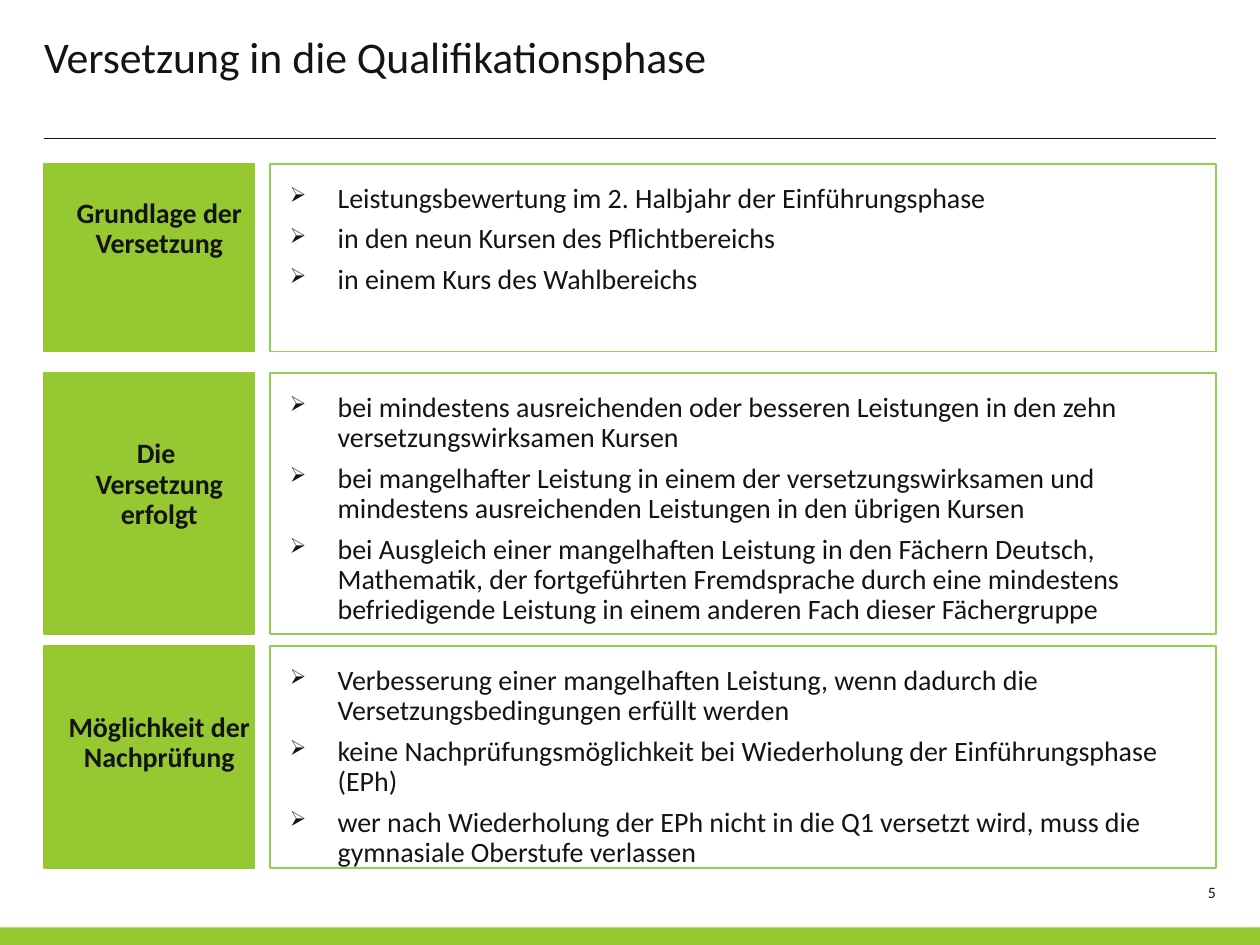
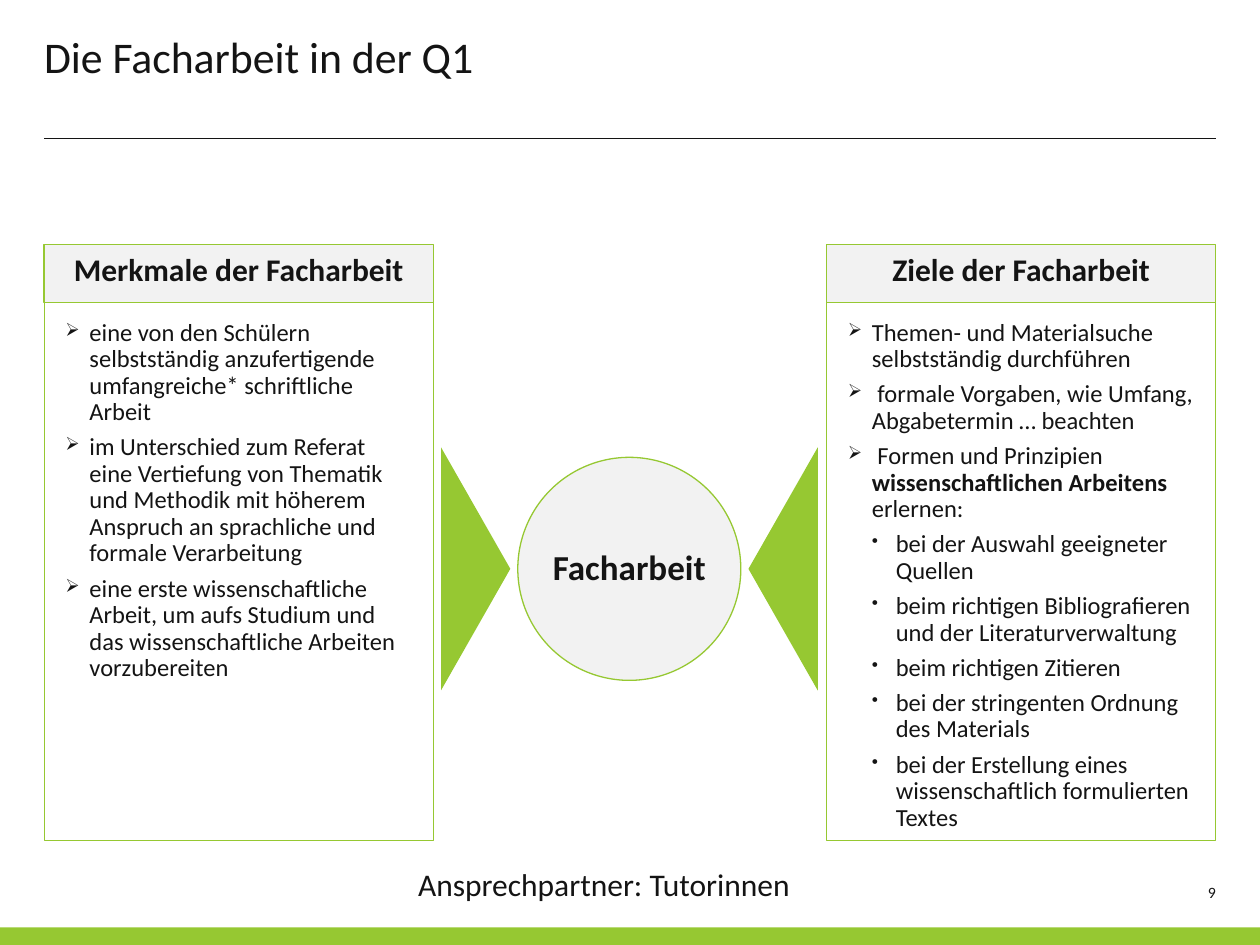
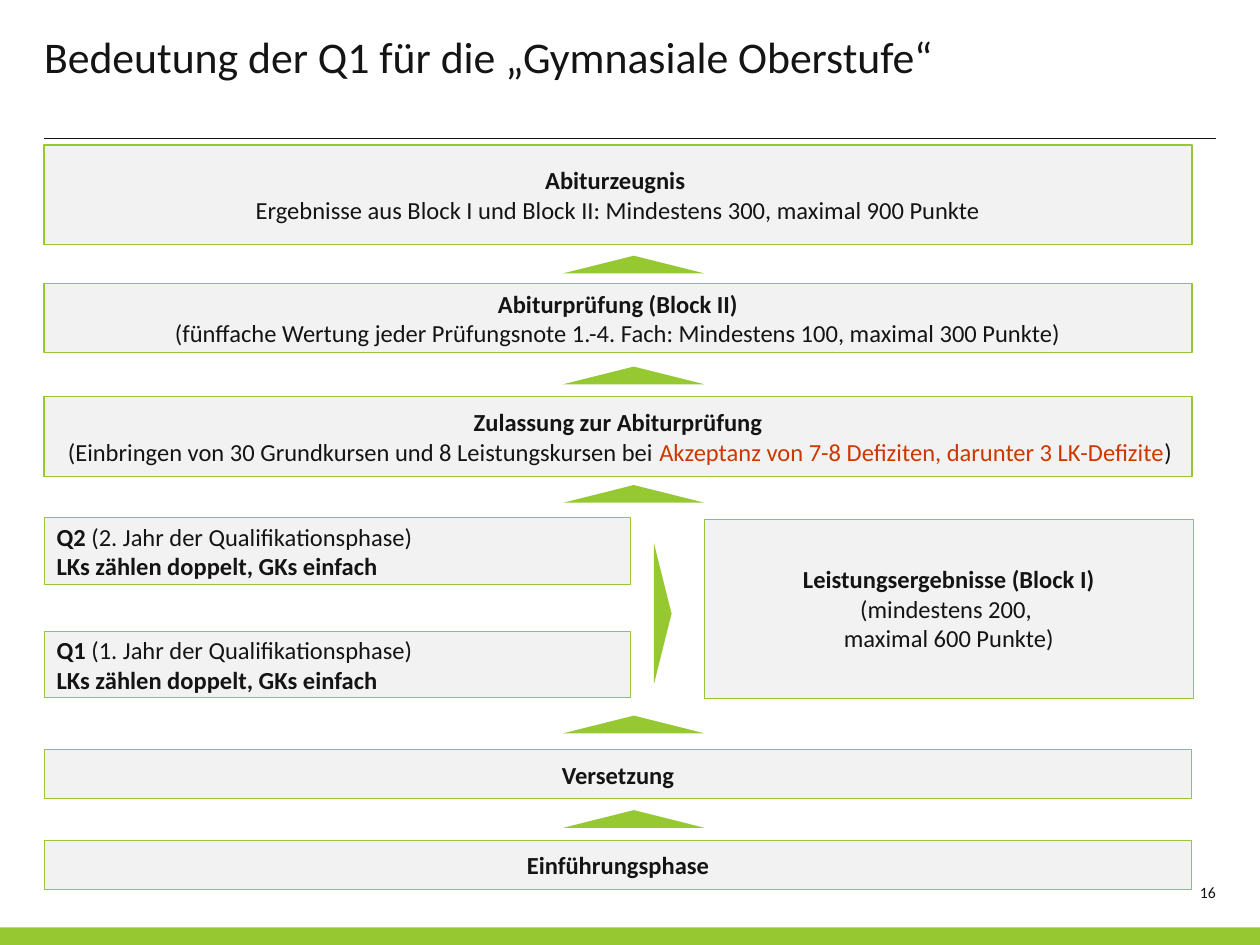
"""Builds three slides on the upper school: promotion, term paper and the way to the Abitur."""
from lxml.etree import SubElement
from pptx import Presentation
from pptx.dml.color import RGBColor
from pptx.enum.shapes import MSO_CONNECTOR as Line, MSO_SHAPE as Kind
from pptx.enum.text import MSO_ANCHOR as Anchor, PP_ALIGN as Align
from pptx.oxml.ns import qn
from pptx.util import Inches, Pt

INK = RGBColor(0x14, 0x14, 0x14)
GREEN = RGBColor(0x96, 0xC8, 0x32)
LIME = RGBColor(0x92, 0xD0, 0x50)
GREY = RGBColor(0xF2, 0xF2, 0xF2)
WHITE = RGBColor(0xFF, 0xFF, 0xFF)
RED = RGBColor(0xCD, 0x37, 0x00)
FONT = "Calibri"
LEFT, RIGHT = 0.35, 9.65
ARROW, DOT = "➢", "•"
NONE = (0, 0, 0, 0)
INSET = (0.1, 0.05, 0.1, 0.05)

RULES = [
    (1.3, 1.49, 0.28, ["Grundlage der Versetzung"], [
        "Leistungsbewertung im 2. Halbjahr der Einführungsphase",
        "in den neun Kursen des Pflichtbereichs",
        "in einem Kurs des Wahlbereichs"]),
    (2.96, 2.07, 0.53, ["Die ", "Versetzung erfolgt"], [
        "bei mindestens ausreichenden oder besseren Leistungen in den zehn "
        "versetzungswirksamen Kursen",
        "bei mangelhafter Leistung in einem der versetzungswirksamen und "
        "mindestens ausreichenden Leistungen in den übrigen Kursen",
        "bei Ausgleich einer mangelhaften Leistung in den Fächern Deutsch, "
        "Mathematik, der fortgeführten Fremdsprache durch eine mindestens "
        "befriedigende Leistung in einem anderen Fach dieser Fächergruppe"]),
    (5.13, 1.76, 0.53, ["Möglichkeit der Nachprüfung"], [
        "Verbesserung einer mangelhaften Leistung, wenn dadurch die "
        "Versetzungsbedingungen erfüllt werden",
        "keine Nachprüfungsmöglichkeit bei Wiederholung der Einführungsphase (EPh)",
        "wer nach Wiederholung der EPh nicht in die Q1 versetzt wird, muss die "
        "gymnasiale Oberstufe verlassen"]),
]

PANELS = [
    (0.35, "Merkmale der Facharbeit", [
        "eine von den Schülern selbstständig anzufertigende umfangreiche* schriftliche Arbeit",
        "im Unterschied zum Referat eine Vertiefung von Thematik und Methodik mit "
        "höherem Anspruch an sprachliche und formale Verarbeitung",
        "eine erste wissenschaftliche Arbeit, um aufs Studium und das "
        "wissenschaftliche Arbeiten vorzubereiten"], []),
    (6.56, "Ziele der Facharbeit", [
        "Themen- und Materialsuche selbstständig durchführen",
        " formale Vorgaben, wie Umfang, Abgabetermin … beachten",
        [(" Formen und Prinzipien ", False), ("wissenschaftlichen Arbeitens ", True),
         ("erlernen:", False)]], [
        "bei der Auswahl geeigneter Quellen",
        "beim richtigen Bibliografieren und der Literaturverwaltung",
        "beim richtigen Zitieren",
        "bei der stringenten Ordnung des Materials",
        "bei der Erstellung eines wissenschaftlich formulierten Textes"]),
]
WEDGES = [(3.775, 90), (6.215, 270)]

YEARS = [(5.01, "Q1 ", "(1. Jahr der Qualifikationsphase)"),
         (4.11, "Q2 ", "(2. Jahr der Qualifikationsphase)")]
DOUBLE = "LKs zählen doppelt, GKs einfach"
STEPS = [
    (6.67, 0.39, 0.5, "Einführungsphase", None),
    (5.95, 0.39, 0.5, "Versetzung", None),
    (2.25, 0.55, 0.75, "Abiturprüfung (Block II)",
     "(fünffache Wertung jeder Prüfungsnote 1.-4. Fach: Mindestens 100, maximal 300 Punkte)"),
    (1.15, 0.79, 0.75, "Abiturzeugnis ",
     "Ergebnisse aus Block I und Block II: Mindestens 300, maximal 900 Punkte"),
]
ENTRY = [("(Einbringen von 30 Grundkursen und 8 Leistungskursen bei ", False),
         ("Akzeptanz von 7-8 Defiziten, darunter 3 LK-Defizite", False, RED), (")", False)]
TIPS = [2.03, 2.91, 3.85, 5.68, 6.43]


def pad(frame, inset, anchor=Anchor.TOP):
    frame.word_wrap = True
    frame.vertical_anchor = anchor
    (frame.margin_left, frame.margin_top,
     frame.margin_right, frame.margin_bottom) = map(Inches, inset)


def mark(para, sign, left, hang):
    props = para._p.get_or_add_pPr()
    props.set("marL", str(Inches(left)))
    props.set("indent", str(Inches(-hang)))
    if sign:
        tint = SubElement(props, qn("a:buClr"))
        SubElement(tint, qn("a:srgbClr")).set("val", str(INK))
        SubElement(props, qn("a:buSzPct")).set("val", "75000")
        SubElement(props, qn("a:buChar")).set("char", sign)


def write(frame, lines, size, bold=False, align=Align.LEFT, space=1.0,
          before=0, after=0, sign=None, left=0, hang=0):
    """Adds the lines; a line is a string or a list of (text, bold, colour) runs."""
    for line in lines:
        first = not frame.paragraphs[0].runs
        para = frame.paragraphs[0] if first else frame.add_paragraph()
        para.alignment = align
        para.line_spacing = space
        para.space_before = Pt(0 if first else before)
        para.space_after = Pt(after)
        if left:
            mark(para, sign, left, hang)
        font = para.font
        font.name, font.size = FONT, Pt(size)
        font.color.rgb = INK
        if isinstance(line, str):
            font.bold = bold
            para.add_run().text = line
            continue
        for text, strong, *tint in line:
            run = para.add_run()
            run.text = text
            run.font.bold = strong
            if tint:
                run.font.color.rgb = tint[0]


def shape(slide, kind, at, fill, edge=None, width=0.75, turn=0):
    item = slide.shapes.add_shape(kind, *map(Inches, at))
    item.shadow.inherit = False
    item.fill.solid()
    item.fill.fore_color.rgb = fill
    if edge is None:
        item.line.fill.background()
    else:
        item.line.color.rgb = edge
        item.line.width = Pt(width)
    item.rotation = turn
    return item


def box(slide, at, fill, edge, width, inset=INSET, anchor=Anchor.TOP, kind=Kind.RECTANGLE):
    frame = shape(slide, kind, at, fill, edge, width).text_frame
    pad(frame, inset, anchor)
    return frame


def label(slide, at, text, size, inset=NONE, align=Align.LEFT):
    frame = slide.shapes.add_textbox(*map(Inches, at)).text_frame
    pad(frame, inset)
    write(frame, [text], size, align=align)


def page(deck, title, number):
    slide = deck.slides.add_slide(deck.slide_layouts[6])
    rule = slide.shapes.add_connector(
        Line.STRAIGHT, Inches(LEFT), Inches(1.1), Inches(RIGHT), Inches(1.1))
    rule.line.color.rgb = INK
    rule.line.width = Pt(0.75)
    SubElement(rule._element.spPr, qn("a:effectLst"))
    shape(slide, Kind.RECTANGLE, (0, 7.36, 10, 0.14), GREEN)
    label(slide, (LEFT, 0.24, 7.44, 0.87), title, 25)
    label(slide, (9.37, 7.01, 0.28, 0.2), number, 9, align=Align.RIGHT)
    return slide


def promotion(deck):
    slide = page(deck, "Versetzung in die Qualifikationsphase", "5")
    for top, high, drop, name, points in RULES:
        frame = box(slide, (LEFT, top, 1.67, high), GREEN, GREEN, 1, (0.16, drop, 0, 0))
        write(frame, name, 16, True, Align.CENTER, 0.9)
        frame = box(slide, (2.14, top, 7.51, high), WHITE, LIME, 1, (0.16, 0.16, 0.08, 0))
        write(frame, points, 16, space=0.9, after=6, sign=ARROW, left=0.38, hang=0.38)


def paper(deck):
    slide = page(deck, "Die Facharbeit in der Q1", "9")
    for mid, turn in WEDGES:
        shape(slide, Kind.ISOSCELES_TRIANGLE, (mid - 0.965, 4.24, 1.93, 0.55), GREEN, turn=turn)
    frame = box(slide, (4.11, 3.63, 1.77, 1.77), GREY, GREEN, 0.75, NONE,
                Anchor.MIDDLE, Kind.OVAL)
    write(frame, ["Facharbeit"], 20, True, Align.CENTER, 0.9)
    for left, head, points, details in PANELS:
        frame = box(slide, (left, 1.95, 3.09, 4.72), WHITE, GREEN, 0.5, (0.16, 0.59, 0.16, 0.05))
        for lines, sign, start in ((points, ARROW, 0.2), (details, DOT, 0.39)):
            write(frame, lines, 14, space=0.9, before=5, sign=sign, left=start, hang=0.19)
        frame = box(slide, (left, 1.94, 3.09, 0.46), GREY, GREEN, 0.75, (0.16, 0.08, 0.16, 0.08))
        write(frame, [head], 18, True, Align.CENTER, 0.9)
    label(slide, (3.22, 6.82, 4.24, 0.4), "Ansprechpartner: Tutorinnen", 18, INSET)


def path_up(deck):
    slide = page(deck, "Bedeutung der Q1 für die „Gymnasiale Oberstufe“", "16")

    def block(at, width=0.5):
        return box(slide, at, GREY, GREEN, width, anchor=Anchor.MIDDLE)

    for top, high, width, head, note in STEPS:
        frame = block((LEFT, top, 9.11, high), width)
        write(frame, [head], 14, True, Align.CENTER)
        if note:
            write(frame, [note], 14, align=Align.CENTER)
    for top, name, note in YEARS:
        frame = block((LEFT, top, 4.65, 0.53))
        write(frame, [[(name, True), (note, False)]], 14)
        write(frame, [DOUBLE], 14, True)
    frame = block((5.59, 4.12, 3.88, 1.42))
    write(frame, ["Leistungsergebnisse (Block I)"], 14, True, Align.CENTER)
    write(frame, ["(mindestens 200, ", "maximal 600 Punkte)"], 14, align=Align.CENTER)
    frame = block((LEFT, 3.15, 9.11, 0.63), 0.75)
    write(frame, ["Zulassung zur Abiturprüfung"], 14, True, Align.CENTER)
    write(frame, [ENTRY], 14, left=0.09)
    for top in TIPS:
        shape(slide, Kind.ISOSCELES_TRIANGLE, (4.47, top, 1.12, 0.14), GREEN)
    shape(slide, Kind.ISOSCELES_TRIANGLE, (4.7, 4.8, 1.12, 0.14), GREEN, turn=90)


def main():
    deck = Presentation()
    deck.slide_width, deck.slide_height = Inches(10), Inches(7.5)
    for build in (promotion, paper, path_up):
        build(deck)
    deck.save("out.pptx")


if __name__ == "__main__":
    main()
